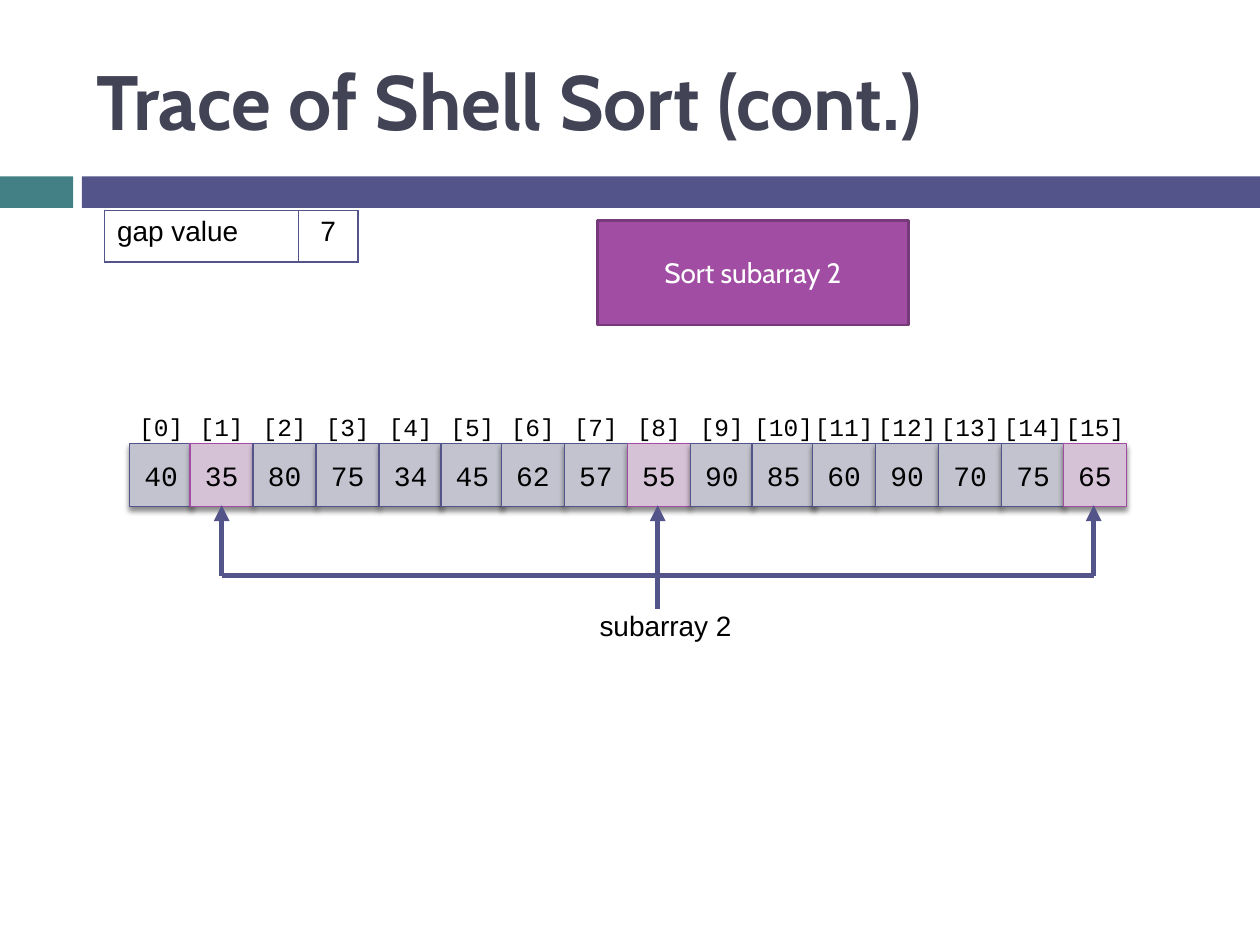
from lxml.etree import SubElement
from pptx import Presentation
from pptx.dml.color import RGBColor
from pptx.enum.shapes import MSO_CONNECTOR, MSO_SHAPE
from pptx.enum.text import MSO_ANCHOR, PP_ALIGN
from pptx.oxml import parse_xml
from pptx.oxml.ns import nsdecls, qn
from pptx.util import Inches, Pt

TEAL = RGBColor(0x43, 0x80, 0x86)
INDIGO = RGBColor(0x53, 0x54, 0x8A)
TITLE_INK = RGBColor(0x42, 0x44, 0x56)
GREY = RGBColor(0xC3, 0xC3, 0xCF)
PINK = RGBColor(0xD6, 0xC2, 0xD7)
PURPLE = RGBColor(0xA0, 0x4D, 0xA3)
DARK_PURPLE = RGBColor(0x76, 0x39, 0x79)
BLACK = RGBColor(0, 0, 0)
WHITE = RGBColor(0xFF, 0xFF, 0xFF)

TITLE = {"name": "Cabin", "size": Pt(44), "bold": True}
BODY = {"name": "Arial", "size": Pt(16)}
VALUE = {"name": "Courier New", "size": Pt(16)}
INDEX = {"name": "Courier New", "size": Pt(14)}
CALLOUT = {"name": "Cabin", "size": Pt(16)}

VALUES = [40, 35, 80, 75, 34, 45, 62, 57, 55, 90, 85, 60, 90, 70, 75, 65]
GAP = 7
SUBARRAY_START = 1
CELL_SIZE = 0.5
GROUP_PITCH = 2.47
GROUP_OFFSETS = [0, 0.48, 0.98, 1.48, 1.98]
SHADOW = (
    f'<a:effectLst {nsdecls("a")}><a:outerShdw blurRad="{Pt(3)}" dist="{Pt(2.4)}" '
    'dir="5400000" rotWithShape="0"><a:srgbClr val="000000"><a:alpha val="45000"/>'
    "</a:srgbClr></a:outerShdw></a:effectLst>"
)


def write(frame, text, style, color=BLACK, align=PP_ALIGN.LEFT):
    paragraph = frame.paragraphs[0]
    paragraph.alignment = align
    run = paragraph.add_run()
    run.text = text
    for name, value in style.items():
        setattr(run.font, name, value)
    run.font.color.rgb = color


def add_text(slide, box, text, style, color=BLACK, align=PP_ALIGN.LEFT, anchor=MSO_ANCHOR.TOP):
    frame = slide.shapes.add_textbox(*map(Inches, box)).text_frame
    frame.word_wrap = True
    frame.vertical_anchor = anchor
    write(frame, text, style, color, align)


def add_rectangle(slide, box, fill, line=None, width=0.79):
    shape = slide.shapes.add_shape(MSO_SHAPE.RECTANGLE, *map(Inches, box))
    shape.shadow.inherit = False
    shape.fill.solid()
    shape.fill.fore_color.rgb = fill
    if line is None:
        shape.line.fill.background()
    else:
        shape.line.color.rgb = line
        shape.line.width = Pt(width)
    shape.text_frame.vertical_anchor = MSO_ANCHOR.MIDDLE
    return shape


def add_line(slide, start, end, arrow=False):
    connector = slide.shapes.add_connector(MSO_CONNECTOR.STRAIGHT, *map(Inches, start + end))
    connector.line.color.rgb = INDIGO
    connector.line.width = Pt(3)
    if arrow:
        SubElement(connector.line._get_or_add_ln(), qn("a:headEnd"), type="triangle")
    SubElement(connector._element.spPr, qn("a:effectLst"))


def add_header(slide, left, top, width):
    add_rectangle(slide, (left, top + 1.4, 0.58, 0.25), TEAL)
    add_rectangle(slide, (left + 0.65, top + 1.4, width - 0.65, 0.25), INDIGO)
    title_box = (left + 0.67, top + 0.25, width - 1.08, 1.08)
    add_text(slide, title_box, "Trace of Shell Sort (cont.)", TITLE, TITLE_INK, anchor=MSO_ANCHOR.MIDDLE)


def add_gap_table(slide, left, top, width, height):
    table = slide.shapes.add_table(1, 2, *map(Inches, (left, top, width, height))).table
    table.first_row = table.horz_banding = False
    contents = [("gap value", 1.54, PP_ALIGN.LEFT), (str(GAP), width - 1.54, PP_ALIGN.CENTER)]
    for column, (text, column_width, align) in enumerate(contents):
        table.columns[column].width = Inches(column_width)
        cell = table.cell(0, column)
        write(cell.text_frame, text, BODY, align=align)
        properties = cell._tc.get_or_add_tcPr()
        for side in ("lnL", "lnR", "lnT", "lnB"):
            border = SubElement(properties, qn(f"a:{side}"), w=str(Pt(1)))
            SubElement(SubElement(border, qn("a:solidFill")), qn("a:srgbClr"), val=str(INDIGO))
        cell.fill.background()


def add_callout(slide, box):
    shape = add_rectangle(slide, box, PURPLE, DARK_PURPLE, 1.5)
    write(shape.text_frame, "Sort subarray 2", CALLOUT, WHITE, PP_ALIGN.CENTER)


def add_array(slide, left, top):
    label_width = 0.8
    for index, value in enumerate(VALUES):
        group, position = divmod(index, len(GROUP_OFFSETS))
        cell_left = left + group * GROUP_PITCH + GROUP_OFFSETS[position]
        selected = index % GAP == SUBARRAY_START
        fill, line = (PINK, PURPLE) if selected else (GREY, INDIGO)
        shape = add_rectangle(slide, (cell_left, top + 0.3, CELL_SIZE, CELL_SIZE), fill, line)
        properties = shape._element.spPr
        properties.replace(properties.find(qn("a:effectLst")), parse_xml(SHADOW))
        write(shape.text_frame, str(value), VALUE, align=PP_ALIGN.CENTER)
        label_left = cell_left + (CELL_SIZE - label_width) / 2
        add_text(slide, (label_left, top, label_width, 0.34), f"[{index}]", INDEX, align=PP_ALIGN.CENTER)


def add_bracket(slide, left, top, width):
    right, middle, bar = left + width, left + width / 2, top + 0.56
    for x, bottom in ((left, bar), (right, bar), (middle, top + 0.82)):
        add_line(slide, (x, top), (x, bottom), arrow=True)
    add_line(slide, (left, bar), (right, bar))
    add_text(slide, (middle - 0.56, top + 0.77, 1.31, 0.37), "subarray 2", BODY)


def main():
    presentation = Presentation()
    presentation.slide_width = Inches(10)
    presentation.slide_height = Inches(7.5)
    slide = presentation.slides.add_slide(presentation.slide_layouts[6])
    add_header(slide, 0, 0, 10)
    add_array(slide, 1.03, 3.22)
    add_gap_table(slide, 0.83, 1.67, 2.01, 0.41)
    add_callout(slide, (4.74, 1.75, 2.47, 0.83))
    add_bracket(slide, 1.76, 4.01, 6.92)
    presentation.save("out.pptx")


if __name__ == "__main__":
    main()
